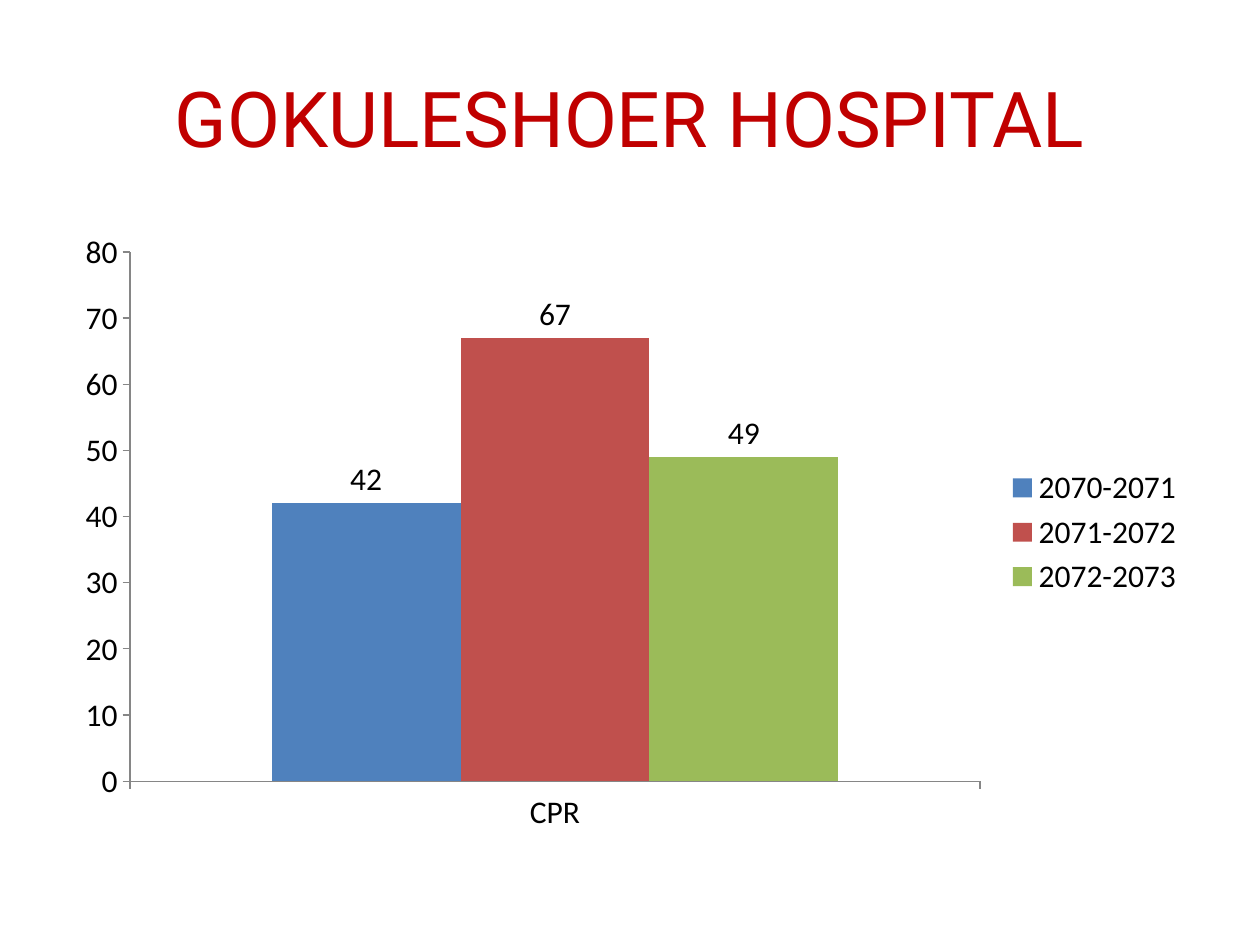
from dataclasses import dataclass

from pptx import Presentation
from pptx.chart.data import CategoryChartData
from pptx.dml.color import RGBColor
from pptx.enum.chart import XL_CHART_TYPE, XL_LABEL_POSITION, XL_LEGEND_POSITION, XL_TICK_MARK
from pptx.enum.text import MSO_ANCHOR, PP_ALIGN
from pptx.util import Inches, Pt

TITLE = "GOKULESHOER HOSPITAL"
CATEGORIES = ["CPR"]
YEARS = [
    ("2070-2071", [42], "4F81BD"),
    ("2071-2072", [67], "C0504D"),
    ("2072-2073", [49], "9BBB59"),
]
MARGIN, CONTENT_WIDTH = 0.5, 9


@dataclass(frozen=True)
class Theme:
    title_font: str = "Roboto"
    title_size: int = 44
    title_color: str = "C00000"
    chart_font: str = "Calibri"
    chart_size: int = 18
    chart_color: str = "000000"
    axis_color: str = "868686"


THEME = Theme()


def style_font(font, name, size, color):
    font.name = name
    font.size = Pt(size)
    font.color.rgb = RGBColor.from_string(color)


def add_title(page):
    box = page.shapes.add_textbox(
        Inches(MARGIN), Inches(0.3), Inches(CONTENT_WIDTH), Inches(1.25)
    )
    frame = box.text_frame
    frame.word_wrap = True
    frame.vertical_anchor = MSO_ANCHOR.MIDDLE
    para = frame.paragraphs[0]
    para.text = TITLE
    para.alignment = PP_ALIGN.CENTER
    style_font(para.font, THEME.title_font, THEME.title_size, THEME.title_color)


def add_year_chart(page):
    data = CategoryChartData()
    data.categories = CATEGORIES
    for year, values, _ in YEARS:
        data.add_series(year, values)
    chart = page.shapes.add_chart(
        XL_CHART_TYPE.COLUMN_CLUSTERED,
        Inches(MARGIN), Inches(1.75), Inches(CONTENT_WIDTH), Inches(4.95), data,
    ).chart
    style_font(chart.font, THEME.chart_font, THEME.chart_size, THEME.chart_color)
    chart.has_title = False
    chart.has_legend = True
    chart.legend.position = XL_LEGEND_POSITION.RIGHT
    chart.legend.include_in_layout = False

    for axis in (chart.category_axis, chart.value_axis):
        axis.has_major_gridlines = False
        axis.major_tick_mark = XL_TICK_MARK.OUTSIDE
        axis.minor_tick_mark = XL_TICK_MARK.NONE
        axis.format.line.color.rgb = RGBColor.from_string(THEME.axis_color)
    chart.value_axis.minimum_scale = 0
    chart.value_axis.maximum_scale = 80
    chart.value_axis.major_unit = 10

    plot = chart.plots[0]
    plot.gap_width = 150
    plot.overlap = 0
    plot.vary_by_categories = False
    for series, (_, _, color) in zip(plot.series, YEARS):
        series.format.fill.solid()
        series.format.fill.fore_color.rgb = RGBColor.from_string(color)
        series.data_labels.show_value = True
        series.data_labels.position = XL_LABEL_POSITION.OUTSIDE_END


def main():
    deck = Presentation()
    deck.slide_width, deck.slide_height = Inches(10), Inches(7.5)
    page = deck.slides.add_slide(deck.slide_layouts[6])
    add_title(page)
    add_year_chart(page)
    deck.save("out.pptx")


if __name__ == "__main__":
    main()
